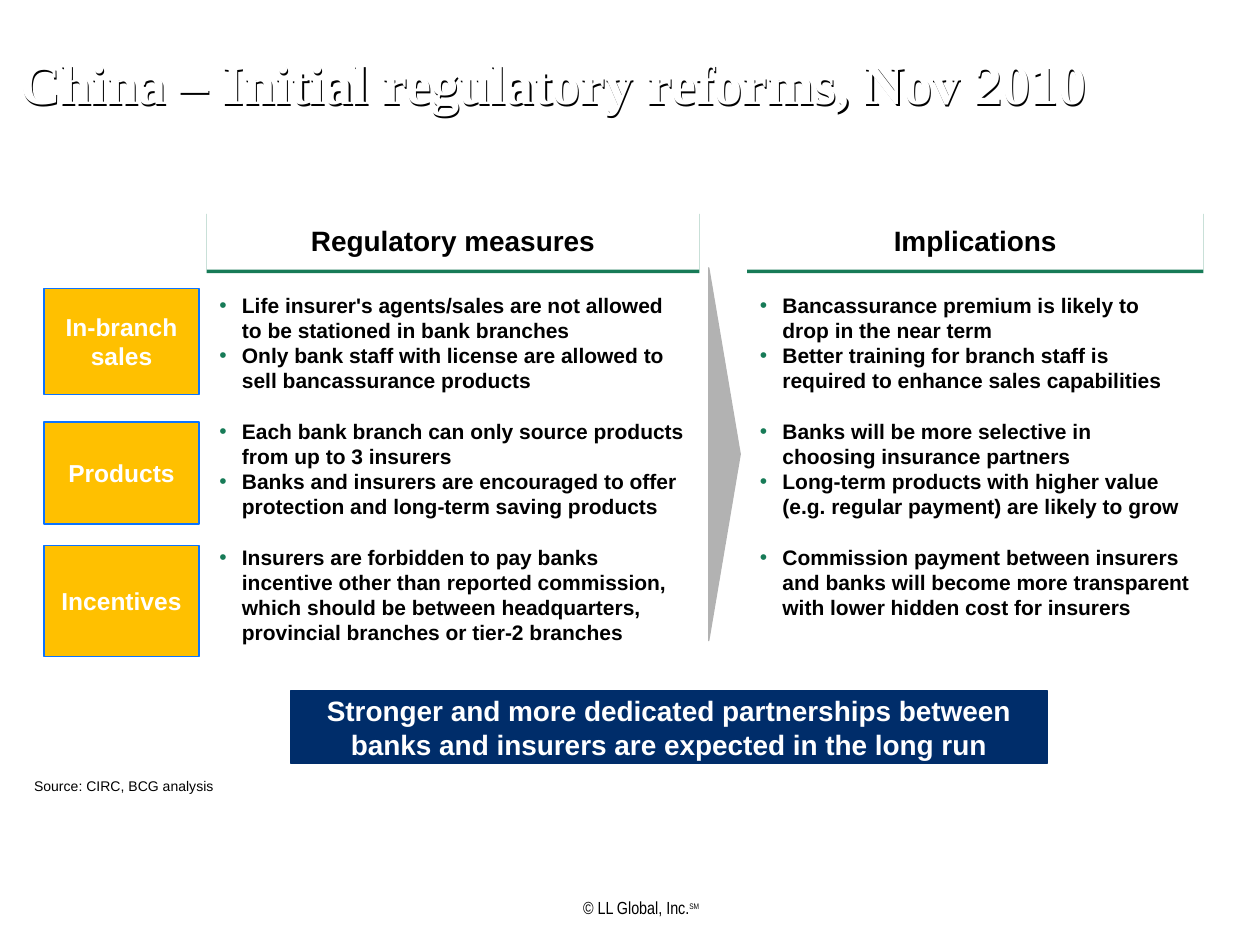
from dataclasses import dataclass

from lxml import etree
from pptx import Presentation
from pptx import util as u
from pptx.dml.color import RGBColor
from pptx.enum import shapes, text
from pptx.oxml import ns

Inches, Pt = u.Inches, u.Pt
LEFT, CENTER = text.PP_ALIGN.LEFT, text.PP_ALIGN.CENTER
TOP, MIDDLE, BOTTOM = (text.MSO_ANCHOR.TOP, text.MSO_ANCHOR.MIDDLE,
                       text.MSO_ANCHOR.BOTTOM)
RECTANGLE = shapes.MSO_SHAPE.RECTANGLE


@dataclass(frozen=True)
class Theme:
    white: str = "FFFFFF"
    black: str = "000000"
    navy: str = "002D6A"
    green: str = "177B57"
    amber: str = "FFC000"
    blue: str = "0C73FF"
    grey: str = "B2B2B2"
    body_font: str = "Arial"
    title_font: str = "Times New Roman"
    footer_font: str = "Arial Narrow"
    title_size: int = 32
    heading_size: int = 16
    label_size: int = 14
    body_size: int = 12
    footer_size: int = 10
    source_size: int = 8


THEME = Theme()

LABELS = [("In-branch sales", 2.29, 0.84), ("Products", 3.35, 0.81),
          ("Incentives", 4.33, 0.88)]

MEASURES = [
    ["Life insurer's agents/sales are not allowed to be stationed in bank branches",
     "Only bank staff with license are allowed to sell bancassurance products"],
    ["Each bank branch can only source products from up to 3 insurers",
     "Banks and insurers are encouraged to offer protection and long-term saving products"],
    ["Insurers are forbidden to pay banks incentive other than reported commission, "
     "which should be between headquarters, provincial branches or tier-2 branches"],
]

IMPLICATIONS = [
    ["Bancassurance premium is likely to drop in the near term",
     "Better training for branch staff is required to enhance sales capabilities"],
    ["Banks will be more selective in choosing insurance partners",
     "Long-term products with higher value (e.g. regular payment) are likely to grow"],
    ["Commission payment between insurers and banks will become more transparent "
     "with lower hidden cost for insurers"],
]


def apply(target, **values):
    for name, value in values.items():
        setattr(target, name, value)


def place(shape, box):
    for name, value in zip(("left", "top", "width", "height"), box):
        setattr(shape, name, Inches(value))


def set_frame(shape, anchor, across=0.1, down=0.05, wrap=True):
    frame = shape.text_frame
    apply(frame, word_wrap=wrap, auto_size=text.MSO_AUTO_SIZE.NONE,
          vertical_anchor=anchor,
          margin_left=Inches(across), margin_right=Inches(across),
          margin_top=Inches(down), margin_bottom=Inches(down))
    return frame


def add_run(paragraph, words, size, color=THEME.black, bold=True,
            name=THEME.body_font):
    run = paragraph.add_run()
    run.text = words
    apply(run.font, size=Pt(size), bold=bold, name=name)
    run.font.color.rgb = RGBColor.from_string(color)
    return run


def add_child(parent, tag, **attributes):
    return etree.SubElement(parent, ns.qn(tag), attributes)


def add_shadow(shape, color, distance, degrees):
    """Hard shadow; on a shape without fill it falls from the text."""
    shape.shadow.inherit = False
    effects = shape._element.spPr.find(ns.qn("a:effectLst"))
    shadow = add_child(effects, "a:outerShdw", blurRad="0",
                       dist=str(Pt(distance)), dir=str(degrees * 60000),
                       algn="ctr", rotWithShape="0")
    add_child(shadow, "a:srgbClr", val=color)


def add_block(slide, kind, box, fill, line=None):
    shape = slide.shapes.add_shape(kind, *map(Inches, box))
    shape.shadow.inherit = False
    shape.fill.solid()
    shape.fill.fore_color.rgb = RGBColor.from_string(fill)
    if line:
        shape.line.color.rgb = RGBColor.from_string(line)
        shape.line.width = Pt(0.75)
    else:
        shape.line.fill.background()
    return shape


def add_text_block(slide, box, words, size, fill, line):
    shape = add_block(slide, RECTANGLE, box, fill, line)
    paragraph = set_frame(shape, MIDDLE).paragraphs[0]
    paragraph.alignment = CENTER
    add_run(paragraph, words, size, THEME.white)


def add_text(slide, box, anchor, margins=(0.1, 0.05), wrap=True):
    shape = slide.shapes.add_textbox(*map(Inches, box))
    return set_frame(shape, anchor, *margins, wrap=wrap).paragraphs[0]


def fill_title(title, box, words):
    """White title that stands out through its shadow."""
    place(title, box)
    title.fill.background()
    add_shadow(title, THEME.black, 1, 45)
    paragraph = set_frame(title, TOP).paragraphs[0]
    apply(paragraph, alignment=LEFT, line_spacing=Pt(52))
    add_run(paragraph, words, THEME.title_size, THEME.white,
            name=THEME.title_font)


def add_heading(slide, box, words):
    """Column heading whose shadow forms a green rule below it."""
    shape = add_block(slide, RECTANGLE, box, THEME.white)
    add_shadow(shape, THEME.green, 2, 90)
    paragraph = set_frame(shape, BOTTOM, 0.1, 0.1).paragraphs[0]
    paragraph.alignment = CENTER
    add_run(paragraph, words, THEME.heading_size)


def fill_list(body, box, groups):
    """Bulleted list with one line of space between groups."""
    place(body, box)
    frame = set_frame(body, TOP, 0.1, 0.1)
    items = [(item, bool(number) and item == group[0])
             for number, group in enumerate(groups) for item in group]
    for number, (item, opens_group) in enumerate(items):
        paragraph = frame.add_paragraph() if number else frame.paragraphs[0]
        properties = paragraph._p.get_or_add_pPr()
        properties.set("marL", str(Inches(0.18)))
        properties.set("indent", str(-Inches(0.18)))
        color = add_child(properties, "a:buClr")
        add_child(color, "a:srgbClr", val=THEME.green)
        add_child(properties, "a:buFont", typeface=THEME.body_font)
        add_child(properties, "a:buChar", char="•")
        apply(paragraph, alignment=LEFT,
              space_before=Pt(14.4 if opens_group else 0))
        add_run(paragraph, item, THEME.body_size)


def add_column(slide, body, box, heading, groups):
    left, top, width, height = box
    heading_height, gap = 0.47, 0.08
    add_heading(slide, (left, top, width, heading_height), heading)
    used = heading_height + gap
    fill_list(body, (left, top + used, width, height - used), groups)


def add_labels(slide, left, width):
    for words, top, height in LABELS:
        add_text_block(slide, (left, top, width, height), words,
                       THEME.label_size, THEME.amber, THEME.blue)


def add_pointer(slide, box):
    pointer = add_block(slide, shapes.MSO_SHAPE.ISOSCELES_TRIANGLE, box,
                        THEME.grey, THEME.grey)
    pointer.rotation = 90


def add_footer(slide, box):
    paragraph = add_text(slide, box, TOP, wrap=False)
    style = dict(bold=False, name=THEME.footer_font)
    add_run(paragraph, "© LL Global, Inc.", THEME.footer_size, **style)
    mark = add_run(paragraph, "SM", THEME.source_size, **style)
    mark._r.get_or_add_rPr().set("baseline", "36000")


def main():
    presentation = Presentation()
    apply(presentation, slide_width=Inches(10), slide_height=Inches(7.5))
    slide = presentation.slides.add_slide(presentation.slide_layouts[3])
    title, measures, implications = slide.placeholders

    fill_title(title, (0.06, 0.15, 9, 1.25),
               "China – Initial regulatory reforms, Nov 2010")
    add_column(slide, measures, (1.64, 1.67, 3.91, 3.58),
               "Regulatory measures", MEASURES)
    add_column(slide, implications, (5.93, 1.67, 3.62, 3.58),
               "Implications", IMPLICATIONS)
    add_labels(slide, 0.35, 1.23)
    add_pointer(slide, (4.27, 3.48, 2.96, 0.25))
    add_text_block(slide, (2.31, 5.48, 6, 0.58),
                   "Stronger and more dedicated partnerships between banks and "
                   "insurers are expected in the long run",
                   THEME.heading_size, THEME.navy, THEME.navy)
    source = add_text(slide, (0.27, 5.95, 9.08, 0.36), BOTTOM, (0, 0))
    source.line_spacing = 0.9
    add_run(source, "Source: CIRC, BCG analysis", THEME.source_size, bold=False)
    add_footer(slide, (4.53, 7.07, 1.13, 0.27))
    presentation.save("out.pptx")


if __name__ == "__main__":
    main()
